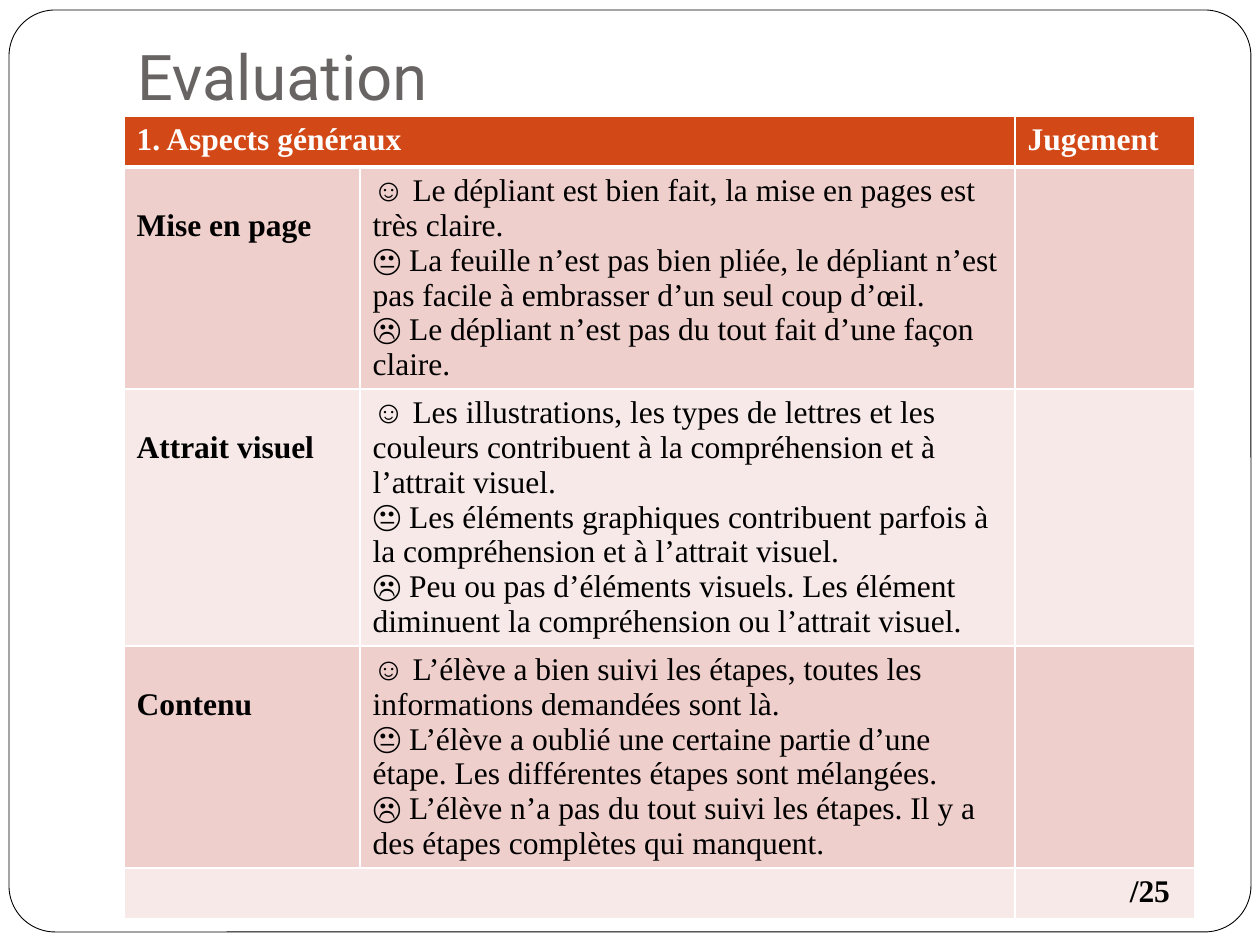
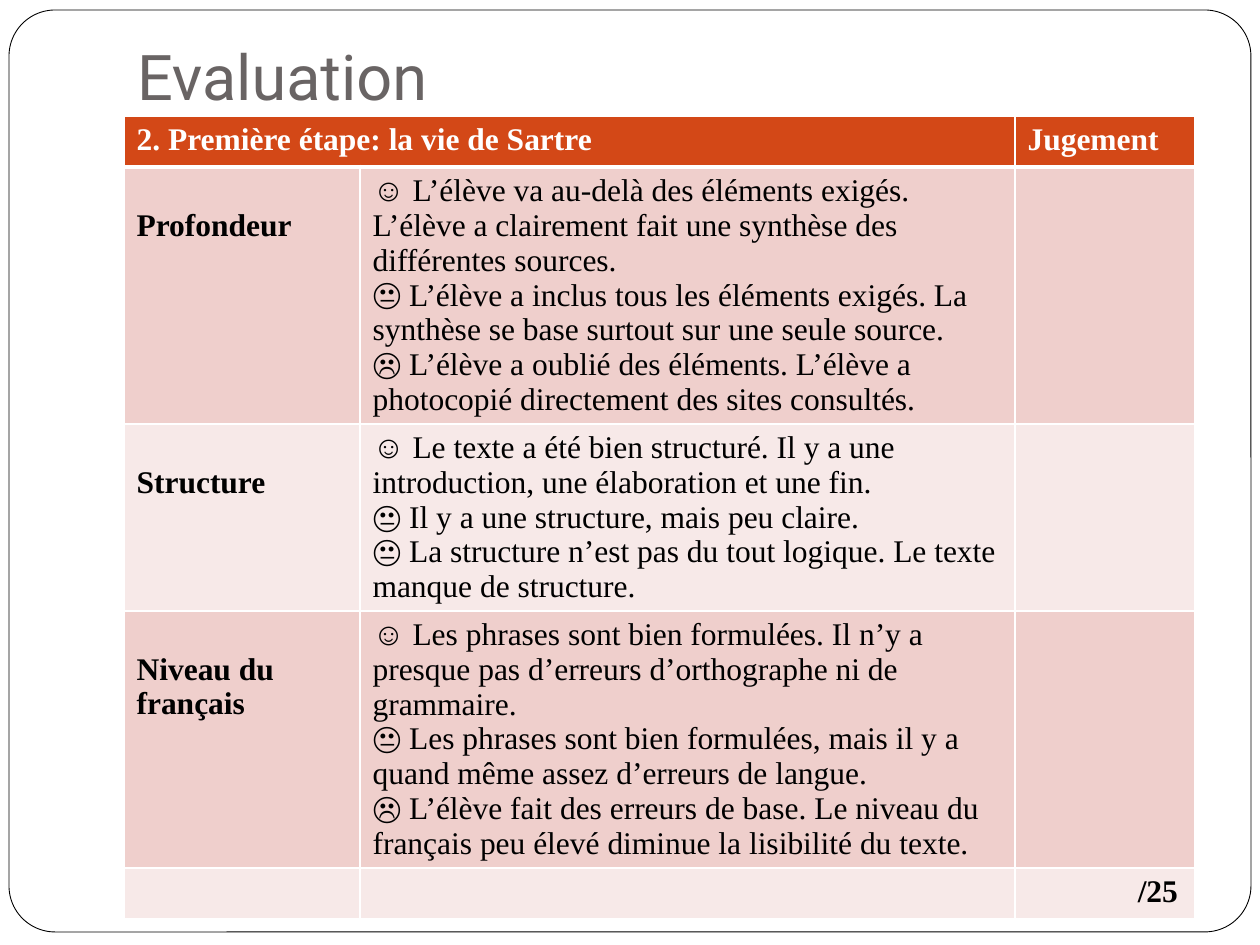
from dataclasses import dataclass
from lxml.etree import SubElement as Sub
from pptx import Presentation
from pptx.dml.color import RGBColor as Rgb
from pptx.enum.shapes import MSO_SHAPE as Shape
from pptx.enum.text import MSO_ANCHOR as Anchor, MSO_AUTO_SIZE as Fit, PP_ALIGN as Align
from pptx.oxml.ns import qn
from pptx.util import Emu, Pt

GOOD, FAIR, POOR = "☺", "😐", "☹"

PAGES = [
    {
        "title": "Evaluation",
        "head": "1. Aspects généraux",
        "rows": [
            ("Mise en page", 222, [
                (GOOD, "Le dépliant est bien fait, la mise en pages est très claire."),
                (FAIR, "La feuille n’est pas bien pliée, le dépliant n’est pas facile à embrasser d’un seul coup d’œil."),
                (POOR, "Le dépliant n’est pas du tout fait d’une façon claire."),
            ]),
            ("Attrait visuel", 257, [
                (GOOD, "Les illustrations, les types de lettres et les couleurs contribuent à la compréhension et à l’attrait visuel."),
                (FAIR, "Les éléments graphiques contribuent parfois à la compréhension et à l’attrait visuel."),
                (POOR, "Peu ou pas d’éléments visuels. Les élément diminuent la compréhension ou l’attrait visuel."),
            ]),
            ("Contenu", 222, [
                (GOOD, "L’élève a bien suivi les étapes, toutes les informations demandées sont là."),
                (FAIR, "L’élève a oublié une certaine partie d’une étape. Les différentes étapes sont mélangées."),
                (POOR, "L’élève n’a pas du tout suivi les étapes. Il y a des étapes complètes qui manquent."),
            ]),
        ],
        "total": "/25",
        "inset": 25,
        "joined": True,
    },
    {
        "title": "Evaluation",
        "head": "2. Première étape: la vie de Sartre",
        "rows": [
            ("Profondeur", 257, [
                (GOOD, "L’élève va au-delà des éléments exigés. L’élève a clairement fait une synthèse des différentes sources."),
                (FAIR, "L’élève a inclus tous les éléments exigés. La synthèse se base surtout sur une seule source."),
                (POOR, "L’élève a oublié des éléments. L’élève a photocopié directement des sites consultés."),
            ]),
            ("Structure", 187, [
                (GOOD, "Le texte a été bien structuré. Il y a une introduction, une élaboration et une fin."),
                (FAIR, "Il y a une structure, mais peu claire."),
                (FAIR, "La structure n’est pas du tout logique. Le texte manque de structure."),
            ]),
            ("Niveau du français", 257, [
                (GOOD, "Les phrases sont bien formulées. Il n’y a presque pas d’erreurs d’orthographe ni de grammaire."),
                (FAIR, "Les phrases sont bien formulées, mais il y a quand même assez d’erreurs de langue."),
                (POOR, "L’élève fait des erreurs de base. Le niveau du français peu élevé diminue la lisibilité du texte."),
            ]),
        ],
        "total": "/25",
        "inset": 17,
        "joined": False,
    },
]
JUDGE = "Jugement"


@dataclass(frozen=True)
class Theme:
    paper: str = "FFFFFF"
    ink: str = "000000"
    gray: str = "696464"
    band: str = "D34817"
    tints: tuple = ("EFCFCC", "F7E9E8")
    sans: str = "Roboto"
    serif: str = "Times New Roman"
    large: int = 36
    small: int = 18
    thin: int = 1
    thick: int = 3


LOOK = Theme()
SCALE = 914400 / 126
WIDE, HIGH = 1260, 945
FRAME = (9, 10, 1242, 922)
TITLE = (124, 26, 1071, 100)
LEFT, TOP = 124, 116
COLS = (236, 655, 180)
EDGE = 51
DROP = 41


def px(num):
    return Emu(round(num * SCALE))


def write(para, text, face, size, color, bold=False):
    run = para.add_run()
    run.text = text
    font = run.font
    font.name, font.size, font.bold = face, Pt(size), bold
    font.color.rgb = Rgb.from_string(color)


def note(para, text, color=LOOK.ink, bold=True):
    write(para, text, LOOK.serif, LOOK.small, color, bold)


def mark(para, char):
    props = para._p.get_or_add_pPr()
    props.set("marL", "0")
    props.set("indent", "0")
    Sub(props, qn("a:buFont"), typeface=LOOK.serif)
    Sub(props, qn("a:buChar"), char=char)


def paint(cell, row):
    props = cell._tc.get_or_add_tcPr()
    heavy = {0: "B", 1: "T"}.get(row)
    for side in "LRTB":
        width = LOOK.thick if side == heavy else LOOK.thin
        line = Sub(props, qn(f"a:ln{side}"), w=str(Pt(width)))
        Sub(Sub(line, qn("a:solidFill")), qn("a:srgbClr"), val=LOOK.paper)
    cell.fill.solid()
    tint = LOOK.tints[(row - 1) % 2] if row else LOOK.band
    cell.fill.fore_color.rgb = Rgb.from_string(tint)


def add_frame(slide, layout):
    frame = slide.shapes.add_shape(Shape.ROUNDED_RECTANGLE, *map(px, FRAME))
    frame.adjustments[0] = 0.05
    frame.shadow.inherit = False
    frame.fill.solid()
    frame.fill.fore_color.rgb = Rgb.from_string(LOOK.paper)
    frame.line.color.rgb = Rgb.from_string(LOOK.ink)
    frame.line.width = Pt(0.5)
    node = frame._element
    node.nvSpPr.cNvPr.set("id", "99")
    layout.shapes._spTree.insert(2, node)


def add_title(slide, text):
    title = slide.shapes.title
    title.left, title.top, title.width, title.height = map(px, TITLE)
    body = title.text_frame
    body.auto_size = Fit.NONE
    body.vertical_anchor = Anchor.BOTTOM
    body.margin_left = body.margin_right = body.margin_bottom = px(13)
    body.margin_top = px(6)
    para = body.paragraphs[0]
    para.alignment = Align.LEFT
    write(para, text, LOOK.sans, LOOK.large, LOOK.gray)


def add_grid(slide, page):
    highs = [EDGE, *(high for _, high, _ in page["rows"]), EDGE]
    last = len(highs) - 1
    grid = slide.shapes.add_table(
        len(highs), len(COLS), px(LEFT), px(TOP), px(sum(COLS)), px(sum(highs))
    ).table
    for col, wide in zip(grid.columns, COLS):
        col.width = px(wide)
    for row, high in enumerate(highs):
        grid.rows[row].height = px(high)
        for col in range(len(COLS)):
            paint(grid.cell(row, col), row)
    for row in [0, last] if page["joined"] else [0]:
        grid.cell(row, 0).merge(grid.cell(row, 1))

    for col, text in ((0, page["head"]), (2, JUDGE)):
        note(grid.cell(0, col).text_frame.paragraphs[0], text, LOOK.paper)

    for row, (label, _, marks) in enumerate(page["rows"], 1):
        cell = grid.cell(row, 0)
        cell.margin_top = px(DROP)
        note(cell.text_frame.paragraphs[0], label)
        body = grid.cell(row, 1).text_frame
        for num, (sign, text) in enumerate(marks):
            para = body.add_paragraph() if num else body.paragraphs[0]
            if sign == POOR:
                note(para, f"{sign} {text}", bold=False)
            else:
                mark(para, sign)
                note(para, f" {text}", bold=False)

    cell = grid.cell(last, 2)
    cell.margin_right = px(page["inset"])
    para = cell.text_frame.paragraphs[0]
    para.alignment = Align.RIGHT
    note(para, page["total"])


def main():
    deck = Presentation()
    deck.slide_width, deck.slide_height = px(WIDE), px(HIGH)
    layout = deck.slide_layouts[5]
    for num, page in enumerate(PAGES):
        slide = deck.slides.add_slide(layout)
        if num == 0:
            add_frame(slide, layout)
        add_title(slide, page["title"])
        add_grid(slide, page)
    deck.save("out.pptx")


if __name__ == "__main__":
    main()
